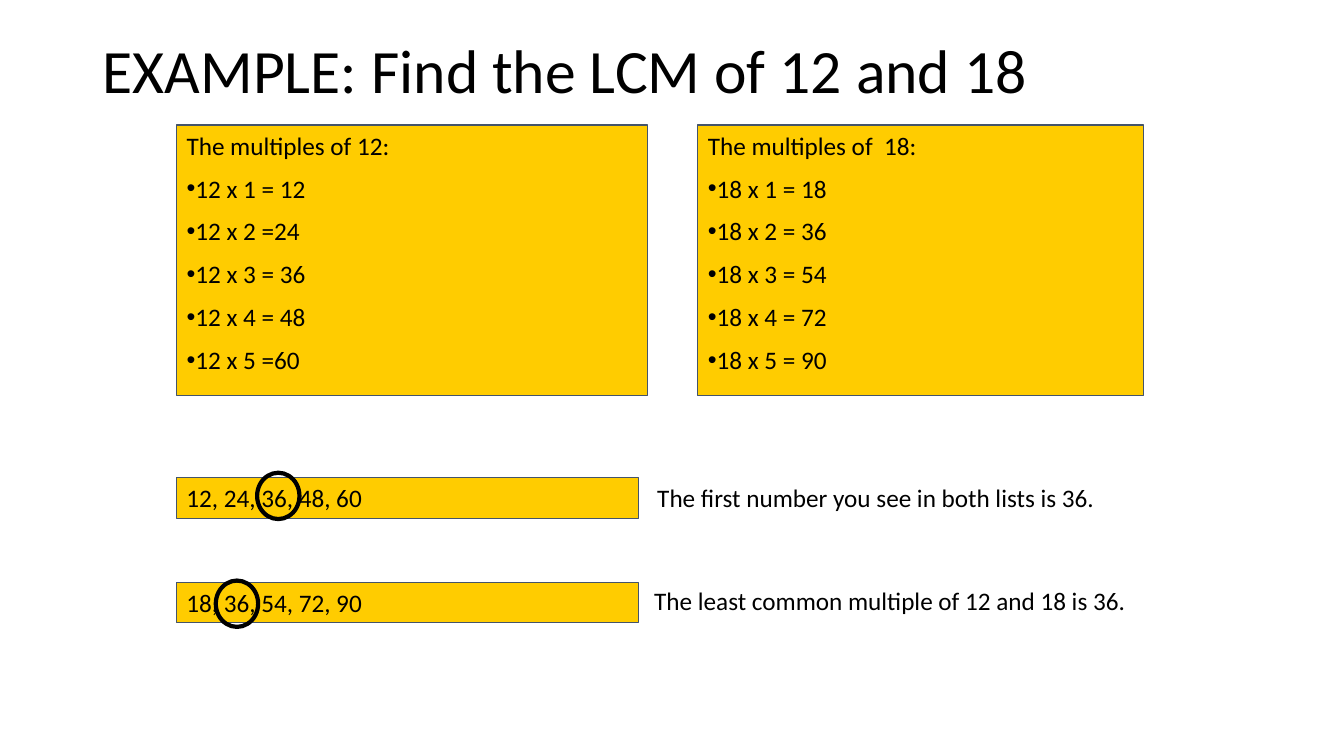
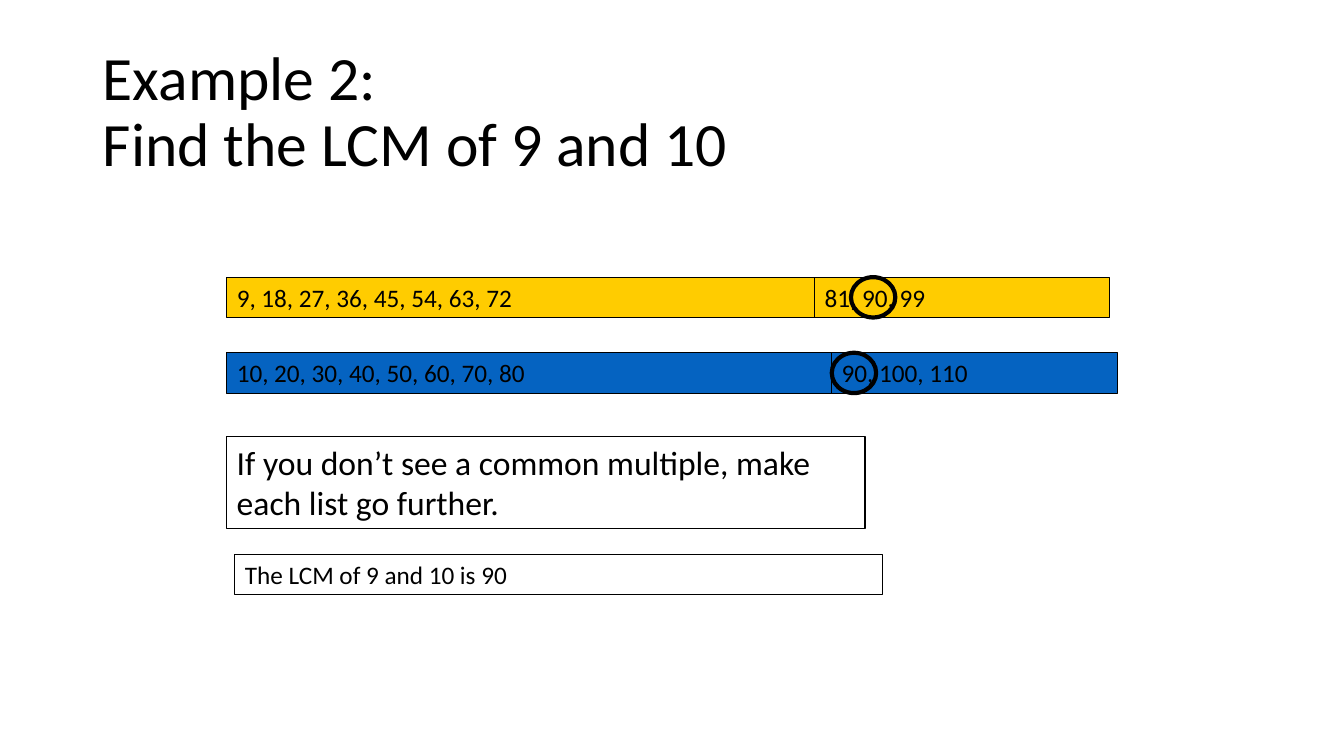
from dataclasses import dataclass

from lxml.etree import SubElement
from pptx import Presentation
from pptx.dml.color import RGBColor
from pptx.enum.shapes import MSO_SHAPE
from pptx.enum.text import MSO_ANCHOR, MSO_AUTO_SIZE, PP_ALIGN
from pptx.oxml.ns import qn
from pptx.util import Inches, Pt


@dataclass(frozen=True)
class Theme:
    font: str = "Calibri"
    ink: RGBColor = RGBColor(0x00, 0x00, 0x00)
    paper: RGBColor = RGBColor(0xFF, 0xFF, 0xFF)
    yellow: RGBColor = RGBColor(0xFF, 0xCC, 0x00)
    blue: RGBColor = RGBColor(0x05, 0x63, 0xC1)
    slate: RGBColor = RGBColor(0x44, 0x54, 0x6A)
    title_size: int = 44
    tip_size: int = 24
    body_size: int = 18
    border: float = 0.75
    ring: float = 3


THEME = Theme()
ROW_HEIGHT = 0.4


def write(frame, *lines, size=THEME.body_size, anchor=MSO_ANCHOR.TOP,
          line_spacing=1.0, bullets_from=None):
    """Fill a text frame; lines from index bullets_from on get a bullet."""
    frame.word_wrap = True
    frame.auto_size = MSO_AUTO_SIZE.NONE
    frame.vertical_anchor = anchor
    for index, line in enumerate(lines):
        paragraph = frame.add_paragraph() if index else frame.paragraphs[0]
        paragraph.text = line
        if bullets_from is not None:
            set_bullet(paragraph, "•" if index >= bullets_from else None)
        paragraph.alignment = PP_ALIGN.LEFT
        paragraph.line_spacing = line_spacing
        paragraph.space_before = Pt(size / 2 if index else 0)
        for run in paragraph.runs:
            run.font.name = THEME.font
            run.font.size = Pt(size)
            run.font.color.rgb = THEME.ink


def set_bullet(paragraph, mark):
    properties = paragraph._p.get_or_add_pPr()
    properties.set("marL", "0")
    properties.set("indent", "0")
    if mark:
        SubElement(properties, qn("a:buChar")).set("char", mark)
    else:
        SubElement(properties, qn("a:buNone"))


def place(shape, left, top, width, height):
    shape.left, shape.top = Inches(left), Inches(top)
    shape.width, shape.height = Inches(width), Inches(height)


def paint(shape, fill, line, weight=THEME.border):
    if fill is None:
        shape.fill.background()
    else:
        shape.fill.solid()
        shape.fill.fore_color.rgb = fill
    shape.line.color.rgb = line
    shape.line.width = Pt(weight)


def add_title(slide, text, top):
    title = slide.shapes.title
    place(title, 0.92, top, 11.5, 1.45)
    write(title.text_frame, text, size=THEME.title_size,
          anchor=MSO_ANCHOR.MIDDLE, line_spacing=0.9)


def add_panel(slide, text, box, fill=THEME.yellow, line=THEME.ink,
              size=THEME.body_size):
    panel = slide.shapes.add_shape(MSO_SHAPE.RECTANGLE, *map(Inches, box))
    panel.shadow.inherit = False
    paint(panel, fill, line)
    write(panel.text_frame, text, size=size)


def add_ring(slide, *box):
    ring = slide.shapes.add_shape(MSO_SHAPE.OVAL, *map(Inches, box))
    ring.shadow.inherit = False
    paint(ring, None, THEME.ink, THEME.ring)


def add_note(slide, text, *box):
    note = slide.shapes.add_textbox(*map(Inches, box))
    write(note.text_frame, text)


def fill_multiples(placeholder, lines, left, width):
    place(placeholder, left, 1.24, width, 2.68)
    paint(placeholder, THEME.yellow, THEME.slate)
    write(placeholder.text_frame, *lines, bullets_from=1)


def build_first_example(deck):
    slide = deck.slides.add_slide(deck.slide_layouts.get_by_name("Two Content"))
    add_title(slide, "EXAMPLE: Find the LCM of 12 and 18", 0)
    fill_multiples(slide.placeholders[1],
                   ["The multiples of 12:", "12 x 1 = 12", "12 x 2 =24",
                    "12 x 3 = 36", "12 x 4 = 48", "12 x 5 =60"], 1.75, 4.67)
    fill_multiples(slide.placeholders[2],
                   ["The multiples of  18:", "18 x 1 = 18", "18 x 2 = 36",
                    "18 x 3 = 54", "18 x 4 = 72", "18 x 5 = 90"], 6.92, 4.42)

    for numbers, top in (("12, 24, 36, 48, 60", 4.74),
                         ("18, 36, 54, 72, 90", 5.78)):
        add_panel(slide, numbers, (1.75, top, 4.58, ROW_HEIGHT),
                  line=THEME.slate)
    for left, top in ((2.55, 4.69), (2.14, 5.76)):
        add_ring(slide, left, top, 0.42, 0.46)
    add_note(slide, "The first number you see in both lists is 36.",
             6.42, 4.74, 5.35, ROW_HEIGHT)
    add_note(slide, "The least common multiple of 12 and 18 is 36.",
             6.39, 5.76, 5.37, ROW_HEIGHT)


def add_extended_list(slide, numbers, extension, top, fill, left, width,
                      ring_offset):
    """Draw a list, its extension from left on, and a ring on the extension."""
    add_panel(slide, numbers, (2.25, top, 6.25, ROW_HEIGHT), fill)
    add_panel(slide, extension, (left, top, width, ROW_HEIGHT), fill)
    add_ring(slide, left + ring_offset, top, 0.44, ROW_HEIGHT)


def build_second_example(deck):
    slide = deck.slides.add_slide(deck.slide_layouts.get_by_name("Title Only"))
    add_title(slide, "Example 2:\vFind the LCM of 9 and 10", 0.4)
    add_extended_list(slide, "9, 18, 27, 36, 45, 54, 63, 72", "81, 90, 99",
                      2.75, THEME.yellow, 8.08, 2.92, 0.36)
    add_extended_list(slide, "10, 20, 30, 40, 50, 60, 70, 80", "90, 100, 110",
                      3.5, THEME.blue, 8.25, 2.83, 0)
    add_panel(slide,
              "If you don’t see a common multiple, make each list go further.",
              (2.25, 4.33, 6.33, 0.91), THEME.paper, size=THEME.tip_size)
    add_panel(slide, "The LCM of 9 and 10 is 90",
              (2.33, 5.5, 6.42, ROW_HEIGHT), THEME.paper)


def main():
    deck = Presentation()
    deck.slide_width, deck.slide_height = Inches(13.33), Inches(7.5)
    build_first_example(deck)
    build_second_example(deck)
    deck.save("out.pptx")


if __name__ == "__main__":
    main()
